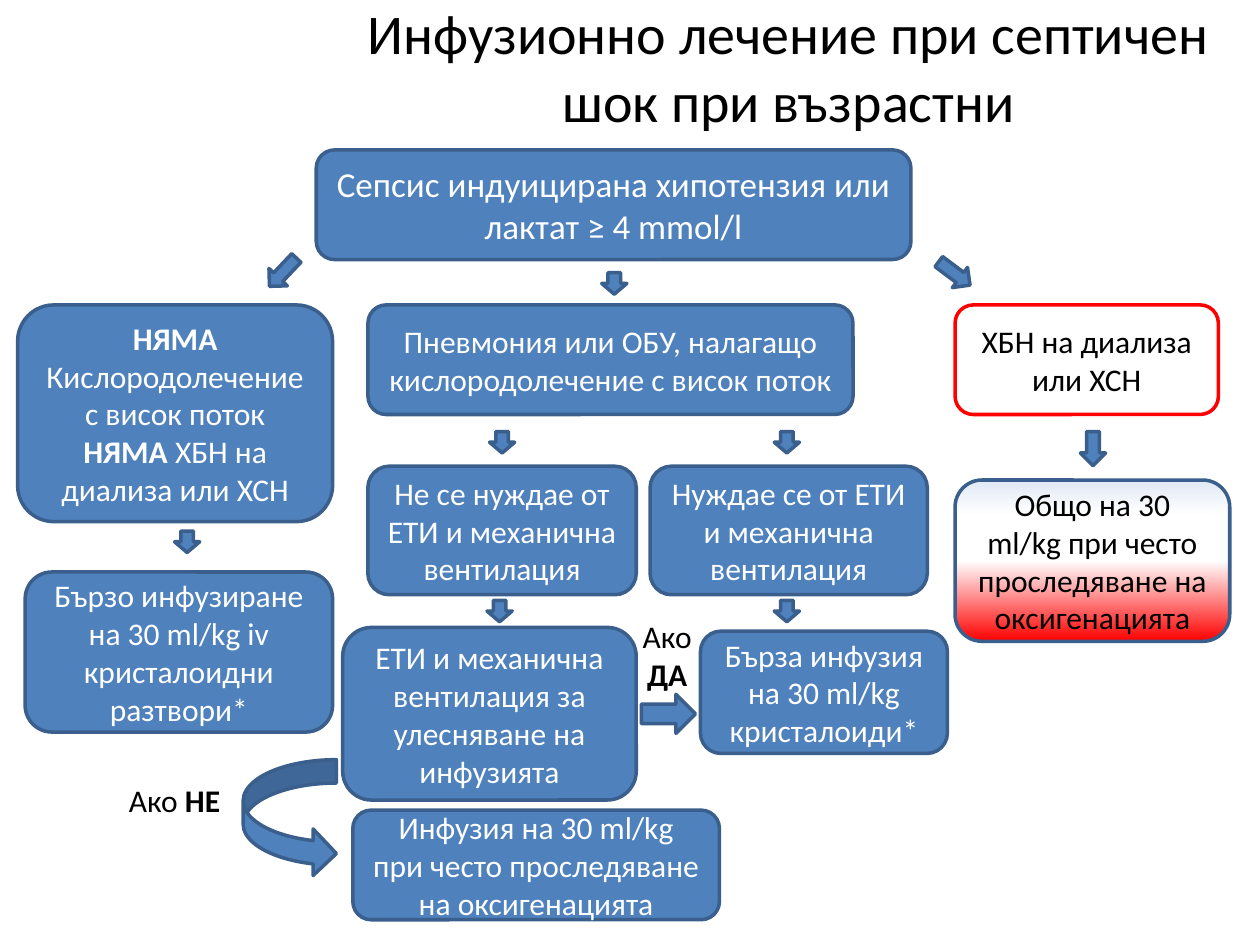
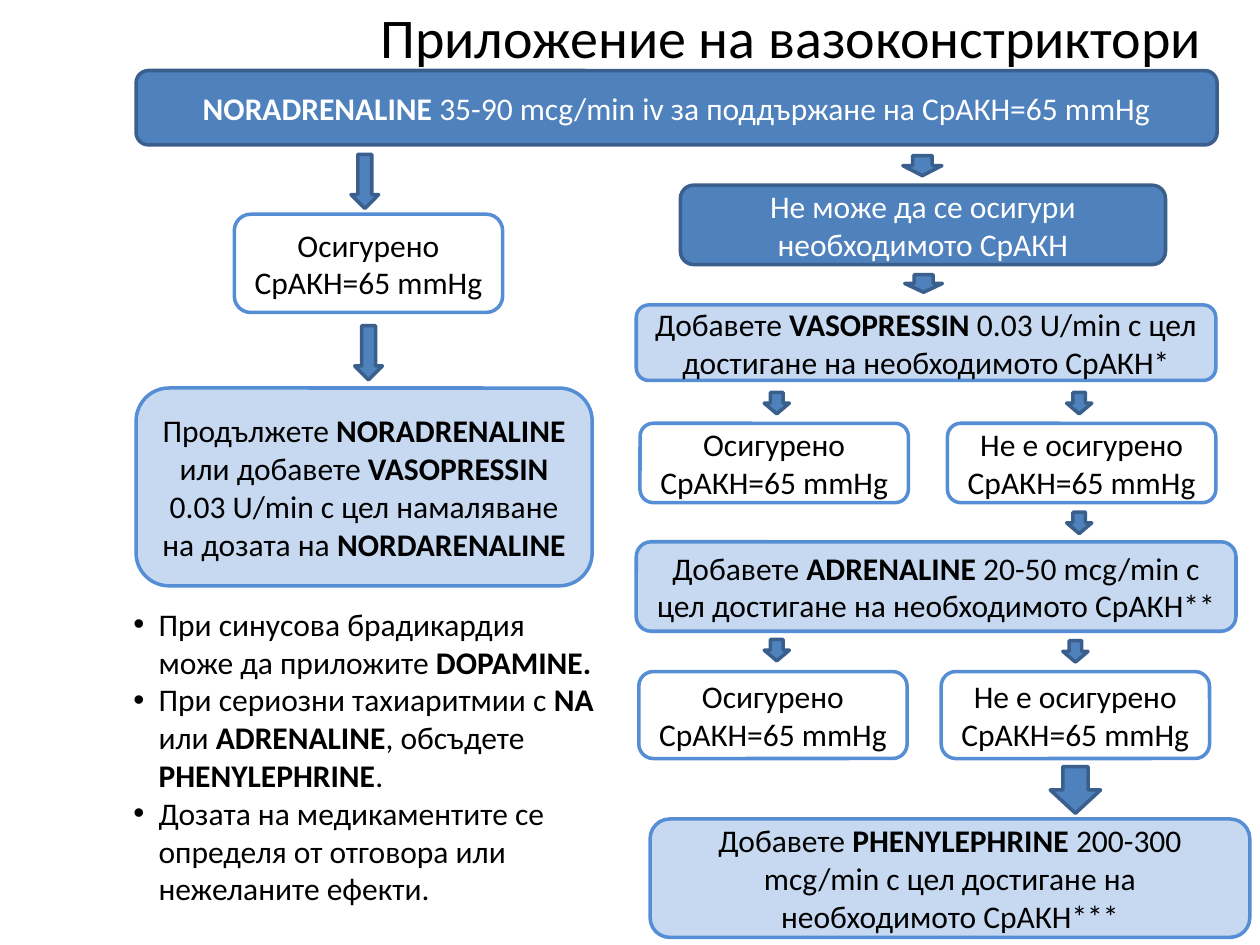
from dataclasses import dataclass
from typing import NamedTuple

from lxml.etree import SubElement
from pptx import Presentation
from pptx.dml.color import RGBColor
from pptx.enum.shapes import MSO_SHAPE
from pptx.enum.text import MSO_ANCHOR, PP_ALIGN
from pptx.oxml.ns import qn
from pptx.util import Inches, Pt

FONT = "Calibri"
BLUE, DARK_BLUE, MID_BLUE, PALE_BLUE = "4F81BD", "3A5F8C", "558ED5", "C6D9F1"
RED, BLACK, WHITE = "FF0000", "000000", "FFFFFF"
WARNING_STOPS = ((0, RED), (50, WHITE), (58, WHITE), (78, WHITE), (100, "E1E8F5"))


class Style(NamedTuple):
    fill: str | tuple | None
    line: str | None
    text: str = BLACK


STEP = Style(BLUE, DARK_BLUE, WHITE)
OUTCOME = Style(None, MID_BLUE)
DRUG = Style(PALE_BLUE, MID_BLUE)
CAUTION = Style(None, RED)
LIMIT = Style(WARNING_STOPS, DARK_BLUE)
NOTES = Style(None, None)


@dataclass
class Box:
    x: float
    y: float
    w: float
    h: float
    text: str
    style: Style = STEP
    size: int = 18
    bullets: bool = False


@dataclass
class Arrow:
    x: float
    y: float
    w: float = 0.17
    h: float = 0.2
    rotation: float = 90
    kind: MSO_SHAPE = MSO_SHAPE.RIGHT_ARROW


@dataclass
class Label:
    x: float
    y: float
    w: float
    h: float
    text: str


def color(value: str) -> RGBColor:
    return RGBColor.from_string(value)


def place(item: Box | Arrow | Label) -> tuple:
    return Inches(item.x), Inches(item.y), Inches(item.w), Inches(item.h)


def add_bullet(p) -> None:
    pPr = p._p.get_or_add_pPr()
    pPr.set("marL", str(Inches(0.2)))
    pPr.set("indent", str(Inches(-0.2)))
    SubElement(pPr, qn("a:buFont"), typeface="Arial")
    SubElement(pPr, qn("a:buChar"), char="•")


def write(tf, text: str, size: int, ink: str, align=PP_ALIGN.CENTER,
          bullets: bool = False) -> None:
    """Fill a frame: newline parts paragraphs, \\v breaks a line, | toggles bold."""
    for i, paragraph in enumerate(text.split("\n")):
        p = tf.paragraphs[0] if i == 0 else tf.add_paragraph()
        p.alignment = align
        if bullets:
            add_bullet(p)
        for j, part in enumerate(paragraph.split("|")):
            for k, line in enumerate(part.split("\v")):
                if k:
                    p.add_line_break()
                if line:
                    r = p.add_run()
                    r.text = line
                    r.font.name = FONT
                    r.font.size = Pt(size)
                    r.font.bold = j % 2 == 1
                    r.font.color.rgb = color(ink)


def fill_gradient(sp, stops: tuple) -> None:
    """Blend the stops from the bottom edge to the top."""
    sp.fill.gradient()
    sp.fill.gradient_angle = 90
    gs_list = sp.element.spPr.find(qn("a:gradFill")).find(qn("a:gsLst"))
    for gs in list(gs_list):
        gs_list.remove(gs)
    for position, value in stops:
        gs = SubElement(gs_list, qn("a:gs"), pos=str(position * 1000))
        SubElement(gs, qn("a:srgbClr"), val=value)


def paint(sp, style: Style) -> None:
    sp.shadow.inherit = False
    if style.fill is None:
        sp.fill.background()
    elif isinstance(style.fill, tuple):
        fill_gradient(sp, style.fill)
    else:
        sp.fill.solid()
        sp.fill.fore_color.rgb = color(style.fill)
    if style.line is None:
        sp.line.fill.background()
    else:
        sp.line.color.rgb = color(style.line)
        sp.line.width = Pt(2)


def draw_box(s, box: Box) -> None:
    sp = s.shapes.add_shape(MSO_SHAPE.ROUNDED_RECTANGLE, *place(box))
    paint(sp, box.style)
    tf = sp.text_frame
    tf.word_wrap = True
    tf.vertical_anchor = MSO_ANCHOR.MIDDLE
    align = PP_ALIGN.LEFT if box.bullets else PP_ALIGN.CENTER
    write(tf, box.text, box.size, box.style.text, align, box.bullets)


def draw_arrow(s, arrow: Arrow) -> None:
    sp = s.shapes.add_shape(arrow.kind, *place(arrow))
    sp.rotation = arrow.rotation
    paint(sp, STEP)


def draw_label(s, label: Label) -> None:
    tf = s.shapes.add_textbox(*place(label)).text_frame
    tf.word_wrap = False
    write(tf, label.text, 18, BLACK)


def draw_title(s, title: Label) -> None:
    tf = s.shapes.add_textbox(*place(title)).text_frame
    tf.word_wrap = True
    tf.vertical_anchor = MSO_ANCHOR.MIDDLE
    write(tf, title.text, 32, BLACK)


def build_slide(prs, title: Label, boxes: list[Box], arrows: list[Arrow],
                labels: list[Label]) -> None:
    s = prs.slides.add_slide(prs.slide_layouts[6])
    draw_title(s, title)
    for box in boxes:
        draw_box(s, box)
    for arrow in arrows:
        draw_arrow(s, arrow)
    for label in labels:
        draw_label(s, label)


INFUSION_TITLE = Label(2.64, 0.06, 7.24, 0.93,
                       "Инфузионно лечение при септичен шок при възрастни")
INFUSION_BOXES = [
    Box(2.51, 1.19, 4.72, 0.87,
        "Сепсис индуицирана хипотензия или лактат ≥ 4 mmol/l", size=20),
    Box(0.14, 2.42, 2.5, 1.72,
        "|НЯМА |Кислородолечение с висок поток\n|НЯМА |ХБН на диализа или ХСН"),
    Box(0.2, 4.54, 2.44, 1.27,
        "Бързо инфузиране на 30 ml/kg iv кристалоидни разтвори*"),
    Box(2.92, 2.42, 3.85, 0.87,
        "Пневмония или ОБУ, налагащо кислородолечение с висок поток"),
    Box(5.16, 3.7, 2.2, 1.02, "Нуждае се от ЕТИ и механична вентилация"),
    Box(2.92, 3.7, 2.13, 1.02, "Не се нуждае от ЕТИ и механична вентилация"),
    Box(2.72, 4.98, 2.33, 1.37,
        "ЕТИ и механична вентилация за улесняване на инфузията"),
    Box(2.8, 6.43, 2.91, 0.87,
        "Инфузия на 30 ml/kg\vпри често проследяване на оксигенацията"),
    Box(5.56, 5.01, 1.96, 0.97, "Бърза инфузия на 30 ml/kg кристалоиди*"),
    Box(7.58, 3.81, 2.18, 1.28,
        "Общо на 30 ml/kg при често проследяване на оксигенацията", LIMIT),
    Box(7.58, 2.42, 2.09, 0.87, "ХБН на диализа или ХСН", CAUTION),
]
INFUSION_ARROWS = [
    Arrow(2.09, 2.06, 0.31, rotation=133.5),
    Arrow(4.79, 2.15),
    Arrow(7.42, 2.07, 0.31, rotation=36.9),
    Arrow(3.9, 3.41),
    Arrow(6.16, 3.41),
    Arrow(3.88, 4.75),
    Arrow(6.16, 4.75),
    Arrow(1.4, 4.2),
    Arrow(8.54, 3.46, 0.27),
    Arrow(1.93, 6.03, 0.74, 0.93, 0, MSO_SHAPE.CURVED_RIGHT_ARROW),
    Arrow(5.15, 5.45, 0.31, 0.43, 270, MSO_SHAPE.DOWN_ARROW),
]
INFUSION_LABELS = [
    Label(0.92, 6.15, 0.93, 0.4, "Ако |НЕ"),
    Label(5, 4.85, 0.59, 0.71, "Ако\n|ДА"),
]

REACHED = "Осигурено\nСрАКН=65 mmHg"
NOT_REACHED = "Не е осигурено\nСрАКН=65 mmHg"
PRESSOR_TITLE = Label(2.67, 0.06, 7.22, 0.46, "Приложение на вазоконстриктори")
PRESSOR_BOXES = [
    Box(1.08, 0.56, 8.58, 0.59,
        "|NORADRENALINE| 35-90 mcg/min iv за поддържане на СрАКН=65 mmHg"),
    Box(1.86, 1.7, 2.13, 0.78, REACHED, OUTCOME),
    Box(1.08, 3.08, 3.62, 1.57,
        "Продължете |NORADRENALINE |или добавете |VASOPRESSIN| 0.03 U/min "
        "с цел намаляване на дозата на |NORDARENALINE", DRUG),
    Box(5.4, 1.47, 3.85, 0.63, "Не може да се осигури необходимото СрАКН"),
    Box(5.05, 2.42, 4.6, 0.6,
        "Добавете |VASOPRESSIN| 0.03 U/min с цел достигане на необходимото СрАКН*",
        DRUG),
    Box(5.08, 3.36, 2.13, 0.63, REACHED, OUTCOME),
    Box(7.52, 3.36, 2.13, 0.63, NOT_REACHED, OUTCOME),
    Box(5.05, 4.3, 4.76, 0.71,
        "Добавете |ADRENALINE| 20-50 mcg/min с цел достигане на необходимото СрАКН**",
        DRUG),
    Box(5.07, 5.33, 2.13, 0.69, REACHED, OUTCOME),
    Box(7.47, 5.33, 2.13, 0.69, NOT_REACHED, OUTCOME),
    Box(5.16, 6.5, 4.76, 0.94,
        "Добавете |PHENYLEPHRINE| 200-300 mcg/min с цел достигане на "
        "необходимото СрАКН***", DRUG),
    Box(0.83, 4.66, 4.21, 2.68,
        "При синусова брадикардия може да приложите |DOPAMINE.\n"
        "При сериозни тахиаритмии с |NA |или |АDRENALINE|, обсъдете |PHENYLEPHRINE|.\n"
        "Дозата на медикаментите се определя от отговора или нежеланите ефекти.",
        NOTES, bullets=True),
]
PRESSOR_ARROWS = [
    Arrow(2.68, 1.33, 0.43, 0.22),
    Arrow(2.71, 2.69, 0.43, 0.22),
    Arrow(7.24, 1.16, 0.16, 0.31),
    Arrow(7.26, 2.1, 0.14, 0.3),
    Arrow(6.08, 3.1),
    Arrow(8.48, 3.1),
    Arrow(8.48, 4.05),
    Arrow(6.08, 5.06),
    Arrow(8.45, 5.07),
    Arrow(8.35, 6.07, 0.37, 0.4),
]


def main() -> None:
    prs = Presentation()
    prs.slide_width, prs.slide_height = Inches(10), Inches(7.5)
    build_slide(prs, INFUSION_TITLE, INFUSION_BOXES, INFUSION_ARROWS, INFUSION_LABELS)
    build_slide(prs, PRESSOR_TITLE, PRESSOR_BOXES, PRESSOR_ARROWS, [])
    prs.save("out.pptx")


if __name__ == "__main__":
    main()
